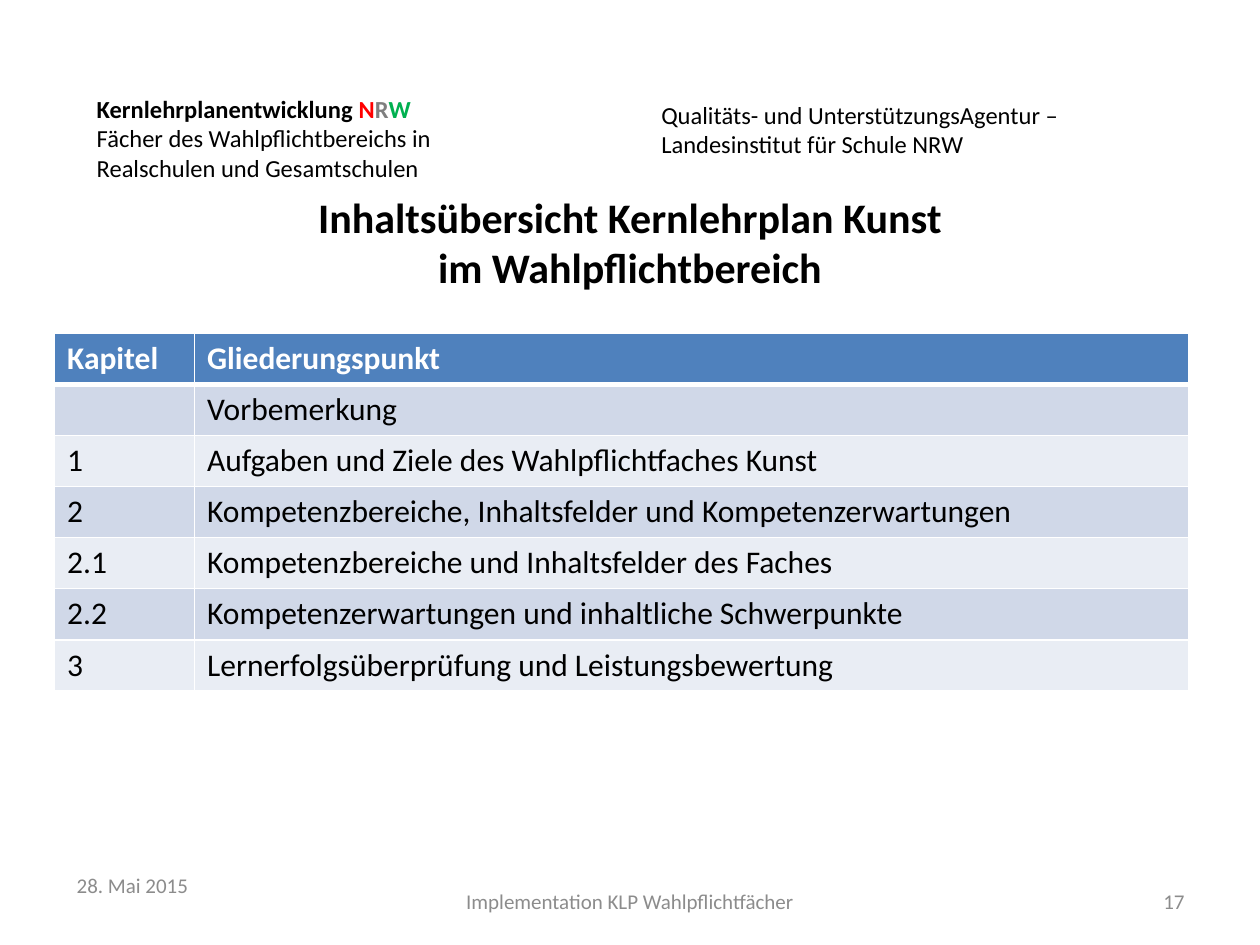
import pptx
import pptx.dml.color
import pptx.enum.text
import pptx.oxml
import pptx.oxml.ns
import pptx.util

Pt = pptx.util.Pt
ALIGN = pptx.enum.text.PP_ALIGN
ANCHOR = pptx.enum.text.MSO_ANCHOR
THEME = {
    "font": "Calibri",
    "black": "000000", "white": "FFFFFF", "red": "FF0000",
    "gray": "7F7F7F", "green": "00B050", "footer_gray": "8C8C8C",
    "header_fill": "4F81BD", "bands": ("D0D8E8", "E9EDF4"),
    "title": 24, "table": 18, "masthead": 14, "footer": 12,
}


def write_text(paragraph, text, size, color="black", bold=False, align=ALIGN.LEFT):
    paragraph.alignment = align
    for index, line in enumerate(text.split("\n")):
        if index:
            paragraph.add_line_break()
        run = paragraph.add_run()
        run.text = line
        run.font.name = THEME["font"]
        run.font.size = Pt(THEME[size])
        run.font.bold = bold
        run.font.color.rgb = pptx.dml.color.RGBColor.from_string(THEME[color])


def add_box(left, top, width, height, anchor=ANCHOR.MIDDLE):
    frame = slide.shapes.add_textbox(Pt(left), Pt(top), Pt(width), Pt(height)).text_frame
    frame.word_wrap = True
    frame.vertical_anchor = anchor
    return frame


presentation = pptx.Presentation()
presentation.slide_width, presentation.slide_height = Pt(720), Pt(540)
slide = presentation.slides.add_slide(presentation.slide_layouts[6])

program = add_box(48.2, 33.8, 244, 90)
for text, color in (("Kernlehrplanentwicklung ", "black"), ("N", "red"), ("R", "gray"), ("W", "green")):
    write_text(program.paragraphs[0], text, size="masthead", color=color, bold=True)
for text in ("Fächer des Wahlpflichtbereichs in", "Realschulen und Gesamtschulen"):
    write_text(program.add_paragraph(), text, size="masthead")

agency = add_box(370.8, 28.8, 244.8, 90)
write_text(agency.paragraphs[0], "Qualitäts- und UnterstützungsAgentur –", size="masthead")
write_text(agency.add_paragraph(), "Landesinstitut für Schule NRW", size="masthead")

title = add_box(36.7, 105.8, 646.6, 56.2, anchor=ANCHOR.TOP)
write_text(title.paragraphs[0], "Inhaltsübersicht Kernlehrplan Kunst\nim Wahlpflichtbereich",
           size="title", bold=True, align=ALIGN.CENTER)

chapters = [
    ("Kapitel", "Gliederungspunkt"),
    ("", "Vorbemerkung"),
    ("1", "Aufgaben und Ziele des Wahlpflichtfaches Kunst"),
    ("2", "Kompetenzbereiche, Inhaltsfelder und Kompetenzerwartungen"),
    ("2.1", "Kompetenzbereiche und Inhaltsfelder des Faches"),
    ("2.2", "Kompetenzerwartungen und inhaltliche Schwerpunkte"),
    ("3", "Lernerfolgsüberprüfung und Leistungsbewertung"),
]
row_height = 29.2
table = slide.shapes.add_table(len(chapters), 2, Pt(31.2), Pt(190.4), Pt(648),
                               Pt(row_height * len(chapters))).table
for column, width in zip(table.columns, (80, 568)):
    column.width = Pt(width)

for row_index, chapter in enumerate(chapters):
    is_header = row_index == 0
    fill = THEME["header_fill"] if is_header else THEME["bands"][(row_index - 1) % 2]
    table.rows[row_index].height = Pt(row_height)
    for column_index, text in enumerate(chapter):
        cell = table.cell(row_index, column_index)
        if text:
            write_text(cell.text_frame.paragraphs[0], text, size="table",
                       color="white" if is_header else "black", bold=is_header)
        properties = cell._tc.get_or_add_tcPr()
        for side in "LRTB":
            heavy = (row_index, side) in ((0, "B"), (1, "T"))
            properties.append(pptx.oxml.parse_xml(
                f'<a:ln{side} {pptx.oxml.ns.nsdecls("a")} w="{Pt(3 if heavy else 1)}">'
                f'<a:solidFill><a:srgbClr val="{THEME["white"]}"/></a:solidFill></a:ln{side}>'))
        cell.fill.solid()
        cell.fill.fore_color.rgb = pptx.dml.color.RGBColor.from_string(fill)

for text, left, top, width, align in (
    ("17", 516, 500.5, 168, ALIGN.RIGHT),
    ("Implementation KLP Wahlpflichtfächer", 246, 500.5, 228, ALIGN.CENTER),
    ("28. Mai 2015", 36.7, 491.2, 168, ALIGN.LEFT),
):
    footer = add_box(left, top, width, 28.8)
    write_text(footer.paragraphs[0], text, size="footer", color="footer_gray", align=align)

presentation.save("out.pptx")
